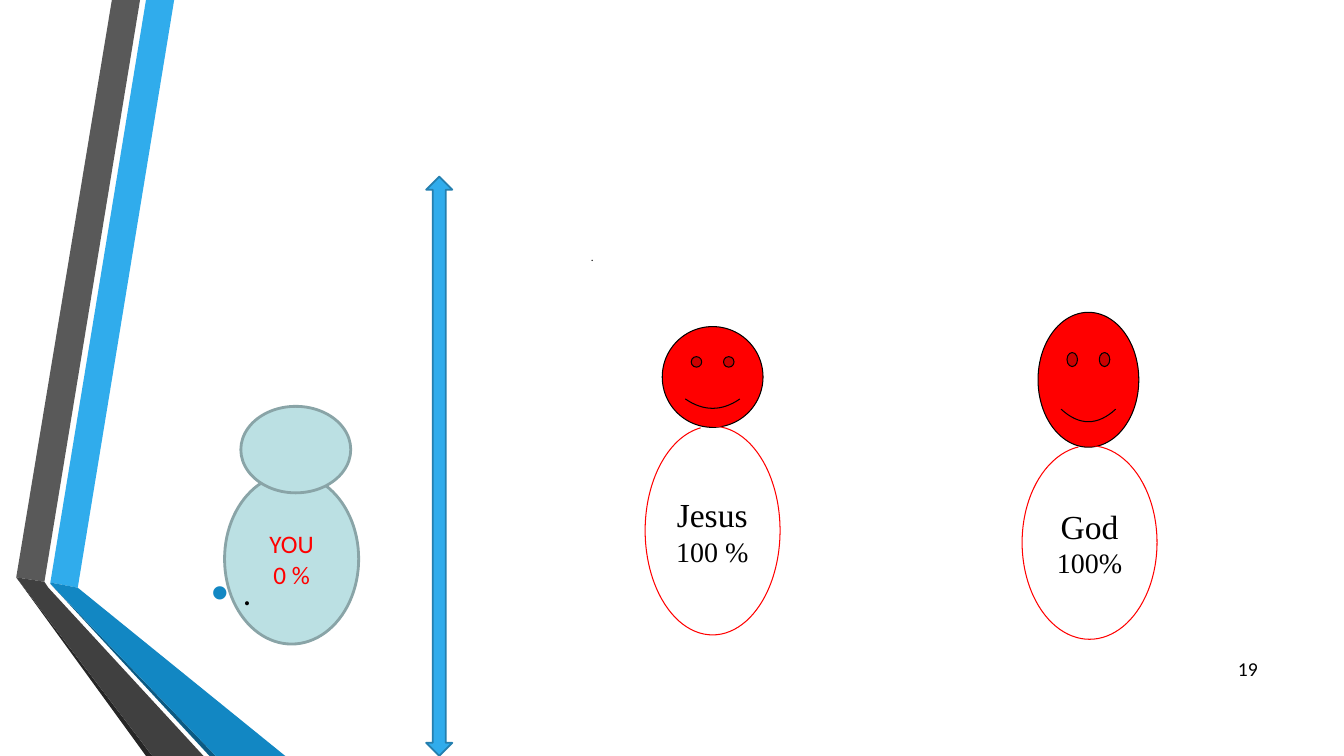
from lxml.etree import SubElement
from pptx import Presentation
from pptx.dml.color import RGBColor
from pptx.enum.shapes import MSO_SHAPE
from pptx.enum.text import MSO_ANCHOR, PP_ALIGN
from pptx.oxml.ns import qn
from pptx.util import Cm, Pt

BLACK = RGBColor(0x00, 0x00, 0x00)
RED = RGBColor(0xFF, 0x00, 0x00)
BLUE = RGBColor(0x30, 0xAC, 0xEC)
MID_BLUE = RGBColor(0x12, 0x87, 0xC3)
DARK_BLUE = RGBColor(0x0C, 0x5A, 0x82)
ARROW_EDGE = RGBColor(0x24, 0x7F, 0xAF)
GREY = RGBColor(0x59, 0x59, 0x59)
DARK_GREY = RGBColor(0x40, 0x40, 0x40)
NEAR_BLACK = RGBColor(0x26, 0x26, 0x26)
PALE_TEAL = RGBColor(0xBB, 0xE0, 0xE3)
TEAL_EDGE = RGBColor(0x89, 0xA4, 0xA7)

prs = Presentation()
prs.slide_width, prs.slide_height = Cm(33.87), Cm(19.05)
slide = prs.slides.add_slide(prs.slide_layouts[6])
shapes = slide.shapes


def paint(shape, fill, edge=None, weight=0):
    shape.shadow.inherit = False
    if fill is None:
        shape.fill.background()
    else:
        shape.fill.solid()
        shape.fill.fore_color.rgb = fill
    if edge is None:
        shape.line.fill.background()
    else:
        shape.line.color.rgb = edge
        shape.line.width = Pt(weight)


def write(shape, lines, font, color, align, **frame_format):
    frame = shape.text_frame
    frame_format = {"word_wrap": True, "vertical_anchor": MSO_ANCHOR.MIDDLE, **frame_format}
    for name, value in frame_format.items():
        setattr(frame, name, value)
    for number, (words, size) in enumerate(lines):
        paragraph = frame.add_paragraph() if number else frame.paragraphs[0]
        paragraph.alignment = align
        run = paragraph.add_run()
        run.text = words
        for name, value in {"name": font, "size": Pt(size)}.items():
            setattr(run.font, name, value)
        run.font.color.rgb = color
    return frame


NO_MARGINS = dict.fromkeys(("margin_left", "margin_top", "margin_right", "margin_bottom"), 0)

# Folded ribbons at the left edge, in hundredths of a centimetre
ribbons = [
    (BLUE, [(127, 1468), (196, 1481), (439, 0), (368, 0)]),
    (GREY, [(353, 0), (282, 0), (41, 1455), (112, 1466)]),
    (NEAR_BLACK, [(41, 1455), (368, 1905), (384, 1905)]),
    (DARK_BLUE, [(127, 1471), (528, 1905), (544, 1905)]),
    (MID_BLUE, [(127, 1468), (127, 1471), (544, 1905), (719, 1905), (196, 1481)]),
    (DARK_GREY, [(513, 1905), (122, 1481), (112, 1466), (41, 1455), (384, 1905)]),
]
for color, corners in ribbons:
    outline = shapes.build_freeform(*corners[0], scale=Cm(0.01))
    outline.add_line_segments(corners[1:], close=True)
    paint(outline.convert_to_shape(), color)

# Slide number and title
page_number = shapes.add_textbox(Cm(30.43), Cm(16.33), Cm(1.52), Cm(1.02))
write(page_number, [("19", 14)], "Calibri", BLACK, PP_ALIGN.RIGHT)

title = shapes.add_textbox(Cm(7.14), Cm(1.19), Cm(20.6), Cm(9.7))
write(title, [(".", 8)], "Calibri", BLACK, PP_ALIGN.CENTER,
      margin_right=Cm(5.27), margin_top=Cm(1))

# Smiling figures: head, body and label boxes
figures = [
    ("Jesus", "100 %", (16.69, 8.23, 2.54, 2.54), (16.26, 10.74, 3.4, 5.26),
     (16.97, 12.37, 1.96, 2.03)),
    ("God", "100%", (26.16, 7.87, 2.54, 3.4), (25.76, 11.23, 3.4, 4.88),
     (26.57, 12.73, 1.78, 1.88)),
]
for name, percent, head_box, body_box, label_box in figures:
    head = shapes.add_shape(MSO_SHAPE.SMILEY_FACE, *map(Cm, head_box))
    paint(head, RED, BLACK, 0.75)
    body = shapes.add_shape(MSO_SHAPE.ARC, *map(Cm, body_box))
    # Angles in units of 100000/60000 degree: from the top round to just before it
    body.adjustments[0], body.adjustments[1] = 162, 158
    paint(body, None, RED, 0.75)
    label = shapes.add_textbox(*map(Cm, label_box))
    write(label, [(name, 24), (percent, 20)], "Times New Roman", BLACK,
          PP_ALIGN.CENTER, **{**NO_MARGINS, "word_wrap": False})

# The faceless figure
you_body = shapes.add_shape(MSO_SHAPE.OVAL, Cm(5.66), Cm(11.94), Cm(3.38), Cm(4.29))
you_head = shapes.add_shape(MSO_SHAPE.OVAL, Cm(6.07), Cm(10.24), Cm(2.77), Cm(2.18))
for part in (you_body, you_head):
    paint(part, PALE_TEAL, TEAL_EDGE, 2)
write(you_body, [("YOU", 18), ("0 %", 18)], "Calibri", RED, PP_ALIGN.CENTER, **NO_MARGINS)

# Bulleted body text
remark = shapes.add_textbox(Cm(5.08), Cm(10.8), Cm(23.7), Cm(8.25))
point = write(remark, [(".", 24)], "Calibri", BLACK, PP_ALIGN.LEFT).paragraphs[0]
for name, value in {"space_before": Pt(4.8), "space_after": Pt(6)}.items():
    setattr(point, name, value)
properties = point._p.get_or_add_pPr()
properties.set("marL", str(Cm(0.79)))
properties.set("indent", str(Cm(-0.79)))
bullet_color = SubElement(properties, qn("a:buClr"))
SubElement(bullet_color, qn("a:srgbClr"), val=str(MID_BLUE))
SubElement(properties, qn("a:buSzPct"), val="145000")
SubElement(properties, qn("a:buFont"), typeface="Arial")
SubElement(properties, qn("a:buChar"), char="•")

# Dividing arrow
divider = shapes.add_shape(MSO_SHAPE.UP_DOWN_ARROW, Cm(10.74), Cm(4.45), Cm(0.66), Cm(14.6))
paint(divider, BLUE, ARROW_EDGE, 1.25)

prs.save("out.pptx")
